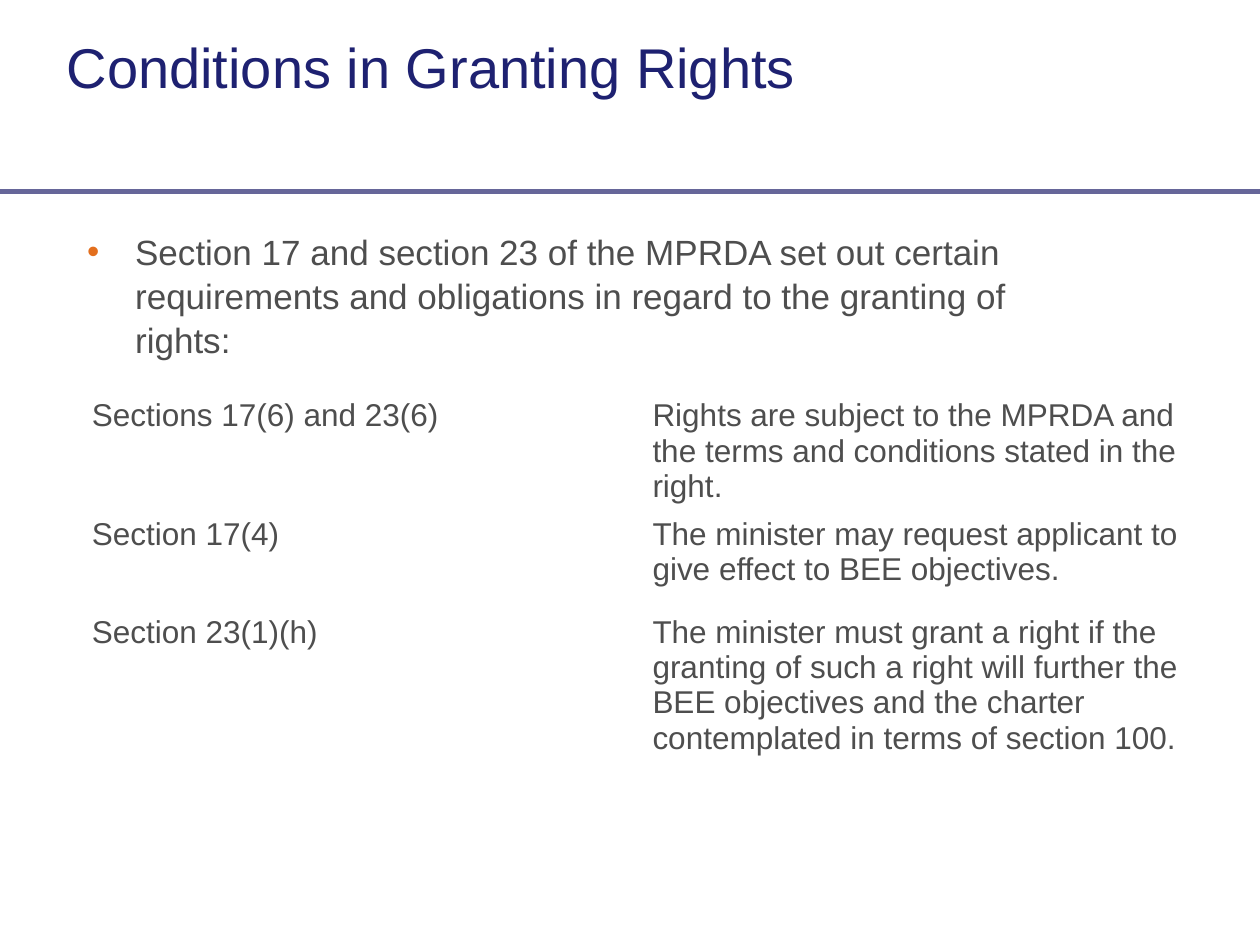
from lxml.etree import SubElement
from pptx import Presentation
from pptx.dml.color import RGBColor
from pptx.enum.text import MSO_ANCHOR, MSO_AUTO_SIZE, PP_ALIGN
from pptx.oxml import parse_xml
from pptx.oxml.ns import nsdecls, qn
from pptx.util import Cm, Pt

NAVY = RGBColor(0x1E, 0x21, 0x71)
GREY = RGBColor(0x4E, 0x4E, 0x4E)
ORANGE = RGBColor(0xE3, 0x6F, 0x1E)
RULE = RGBColor(0x66, 0x66, 0x99)
WHITE = RGBColor(0xFF, 0xFF, 0xFF)

ROWS = [
    ("Sections 17(6) and 23(6)",
     "Rights are subject to the MPRDA and the terms and conditions stated in the right."),
    ("Section 17(4)",
     "The minister may request applicant to give effect to BEE objectives."),
    ("Section 23(1)(h)",
     "The minister must grant a right if the granting of such a right will further "
     "the BEE objectives and the charter contemplated in terms of section 100."),
]


def assign(item, values):
    for name, value in values.items():
        setattr(item, name, value)


class Deck:
    frame = {"word_wrap": True, "auto_size": MSO_AUTO_SIZE.NONE,
             "vertical_anchor": MSO_ANCHOR.TOP}
    para = {"alignment": PP_ALIGN.LEFT, "space_before": Pt(0)}

    def __init__(self):
        self.prs = Presentation()
        assign(self.prs, {"slide_width": Cm(25.4), "slide_height": Cm(19.05)})
        self.slide = self.prs.slides.add_slide(self.prs.slide_layouts[1])

    def label(self, para, text, size, color):
        run = para.add_run()
        run.text = text
        assign(run.font, {"name": "Arial", "size": Pt(size), "bold": False})
        run.font.color.rgb = color

    def fill(self, shape, box, text, size, color):
        """Place a placeholder and return its single paragraph."""
        assign(shape, dict(zip(("left", "top", "width", "height"), map(Cm, box))))
        assign(shape.text_frame, self.frame)
        para = shape.text_frame.paragraphs[0]
        assign(para, self.para)
        self.label(para, text, size, color)
        return para

    def title(self, box, text):
        self.fill(self.slide.shapes.title, box, text, 32, NAVY)

    def bullet(self, box, text):
        para = self.fill(self.slide.placeholders[1], box, text, 20, GREY)
        para.line_spacing = 1.05
        props = para._p.get_or_add_pPr()
        props.set("marL", str(Cm(0.97)))
        props.set("indent", str(Cm(-0.97)))
        tint = SubElement(props, qn("a:buClr"))
        SubElement(tint, qn("a:srgbClr"), val=str(ORANGE))
        SubElement(props, qn("a:buChar"), char="•")

    def line(self, top):
        rule = self.slide.shapes.add_connector(1, 0, Cm(top), self.prs.slide_width, Cm(top))
        rule.line.color.rgb = RULE
        rule.line.width = Pt(3)
        SubElement(rule._element.spPr, qn("a:effectLst"))

    def border(self, cell, head):
        props = cell._tc.get_or_add_tcPr()
        for spot, side in enumerate("LRTB"):
            width = Pt(3 if head and side == "B" else 1)
            props.insert(spot, parse_xml(
                f'<a:ln{side} {nsdecls("a")} w="{width}"><a:solidFill>'
                f'<a:srgbClr val="{WHITE}"/></a:solidFill></a:ln{side}>'))

    def table(self, box, rows, highs):
        grid = self.slide.shapes.add_table(len(rows), len(rows[0]), *map(Cm, box)).table
        assign(grid, {"first_row": False, "horz_banding": False})
        for row, high in zip(grid.rows, highs):
            row.height = Cm(high)
        for r, texts in enumerate(rows):
            for c, text in enumerate(texts):
                cell = grid.cell(r, c)
                cell.fill.solid()
                cell.fill.fore_color.rgb = WHITE
                self.border(cell, r == 0)
                self.label(cell.text_frame.paragraphs[0], text, 18, GREY)


def main():
    deck = Deck()
    # Heading and rule
    deck.line(3.86)
    deck.title((1.09, 0.53, 20.12, 2.92), "Conditions in Granting Rights")
    # Lead statement
    deck.bullet((1.5, 4.47, 20.32, 12.07),
                "Section 17 and section 23 of the MPRDA set out certain requirements "
                "and obligations in regard to the granting of rights:")
    # Sections and their conditions
    deck.table((1.6, 7.9, 22.6, 7.14), ROWS, (1.98, 1.98, 3.18))
    deck.prs.save("out.pptx")


if __name__ == "__main__":
    main()
